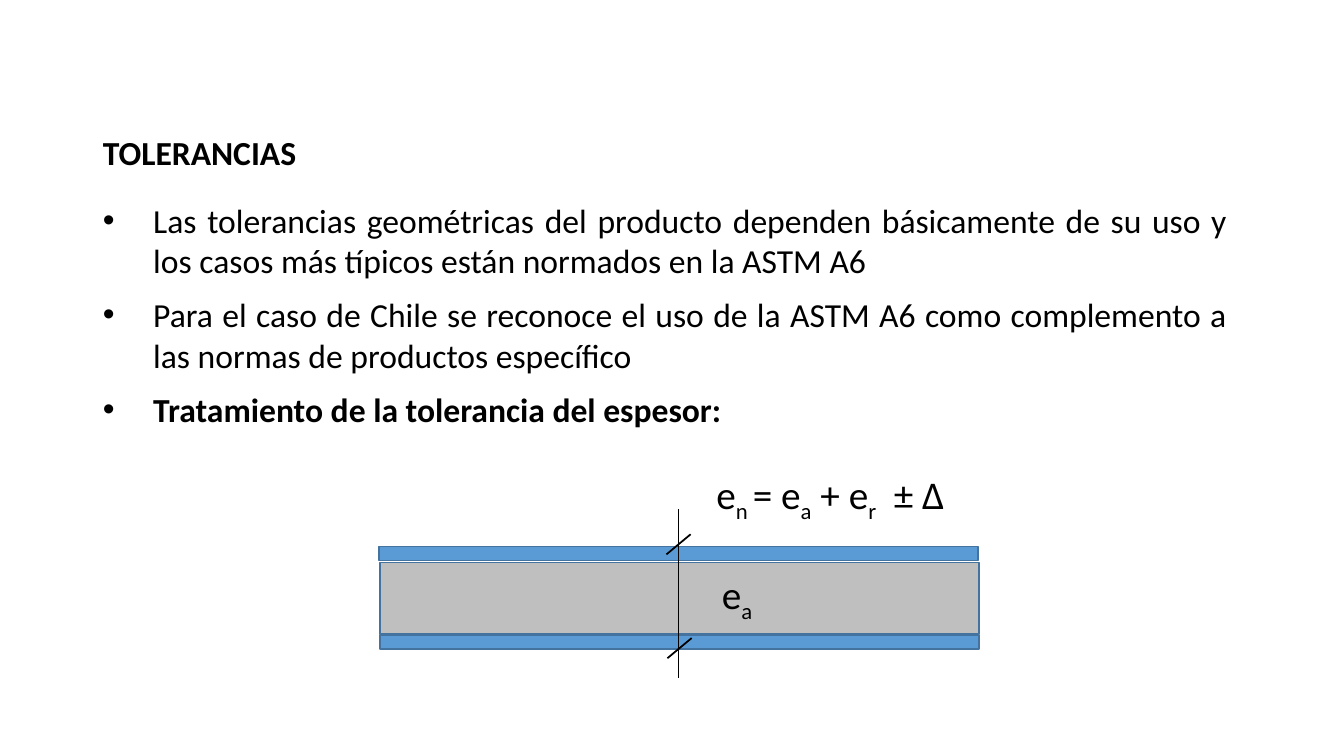
"""Build the slide on thickness tolerances with its plate diagram."""
from lxml.etree import SubElement
from pptx import Presentation
from pptx.dml.color import RGBColor
from pptx.enum.shapes import MSO_CONNECTOR, MSO_SHAPE
from pptx.enum.text import MSO_ANCHOR, MSO_AUTO_SIZE, PP_ALIGN
from pptx.oxml.ns import qn
from pptx.util import Inches, Pt


def color(hex_value):
    return RGBColor.from_string(hex_value)


def format_font(font, size, bold=False):
    for attribute, value in {"name": "Calibri", "size": Pt(size), "bold": bold}.items():
        setattr(font, attribute, value)
    font.color.rgb = color("000000")


deck = Presentation()
deck.slide_width, deck.slide_height = Inches(13.33), Inches(7.5)
slide = deck.slides.add_slide(deck.slide_layouts[1])

heading, points = slide.shapes.title, slide.placeholders[1]
for holder, box, anchor in (
    (heading, (0.92, 1.2, 11.5, 0.66), MSO_ANCHOR.MIDDLE),
    (points, (0.86, 1.93, 11.41, 4.92), MSO_ANCHOR.TOP),
):
    holder.left, holder.top, holder.width, holder.height = map(Inches, box)
    frame_format = {"auto_size": MSO_AUTO_SIZE.NONE, "word_wrap": True, "vertical_anchor": anchor}
    for attribute, value in frame_format.items():
        setattr(holder.text_frame, attribute, value)

heading.text_frame.text = "TOLERANCIAS"
heading_line = heading.text_frame.paragraphs[0]
heading_line.alignment, heading_line.line_spacing = PP_ALIGN.LEFT, 0.9
format_font(heading_line.runs[0].font, 24, True)

statements = [
    "Las tolerancias geométricas del producto dependen básicamente de su uso y "
    "los casos más típicos están normados en la ASTM A6",
    "Para el caso de Chile se reconoce el uso de la ASTM A6 como complemento a "
    "las normas de productos específico",
    "Tratamiento de la tolerancia del espesor:",
]
points.text_frame.text = "\n".join(statements)
for index, statement in enumerate(points.text_frame.paragraphs):
    statement_format = {
        "alignment": PP_ALIGN.JUSTIFY,
        "line_spacing": 1.0,
        "space_before": Pt(10 if index else 0),
    }
    for attribute, value in statement_format.items():
        setattr(statement, attribute, value)
    properties = statement._p.get_or_add_pPr()
    properties.set("marL", str(Inches(0.56)))
    properties.set("indent", str(Inches(-0.5)))
    SubElement(properties, qn("a:buFont"), typeface="Arial")
    SubElement(properties, qn("a:buChar"), char="•")
    format_font(statement.runs[0].font, 24, index == len(statements) - 1)

for left, top, height, fill in (
    (3.77, 5.58, 0.71, "BFBFBF"),
    (3.76, 5.42, 0.14, "5B9BD5"),
    (3.77, 6.3, 0.14, "5B9BD5"),
):
    layer = slide.shapes.add_shape(
        MSO_SHAPE.RECTANGLE, Inches(left), Inches(top), Inches(5.94), Inches(height)
    )
    layer.shadow.inherit = False
    layer.fill.solid()
    layer.fill.fore_color.rgb = color(fill)
    layer.line.color.rgb = color("43739E")
    layer.line.width = Pt(1)

for ends in (
    (6.73, 5.05, 6.73, 6.73),
    (6.85, 5.3, 6.61, 5.5),
    (6.86, 6.33, 6.62, 6.53),
):
    dimension = slide.shapes.add_connector(MSO_CONNECTOR.STRAIGHT, *map(Inches, ends))
    dimension.line.color.rgb = color("000000")
    dimension.line.width = Pt(1.25)
    SubElement(dimension._element.spPr, qn("a:effectLst"))

for box, terms in (
    ((6.94, 4.62, 2.59, 0.57), ["e", "n ", "= e", "a", " + e", "r", "  ± Δ"]),
    ((7.05, 5.61, 0.52, 0.57), ["e", "a"]),
):
    formula = slide.shapes.add_textbox(*map(Inches, box)).text_frame
    formula.word_wrap = False
    formula.auto_size = MSO_AUTO_SIZE.SHAPE_TO_FIT_TEXT
    expression = formula.paragraphs[0]
    expression.alignment = PP_ALIGN.CENTER
    for index, term in enumerate(terms):
        symbol = expression.add_run()
        symbol.text = term
        format_font(symbol.font, 28)
        if index % 2:
            symbol._r.get_or_add_rPr().set("baseline", "-25000")

deck.save("out.pptx")
